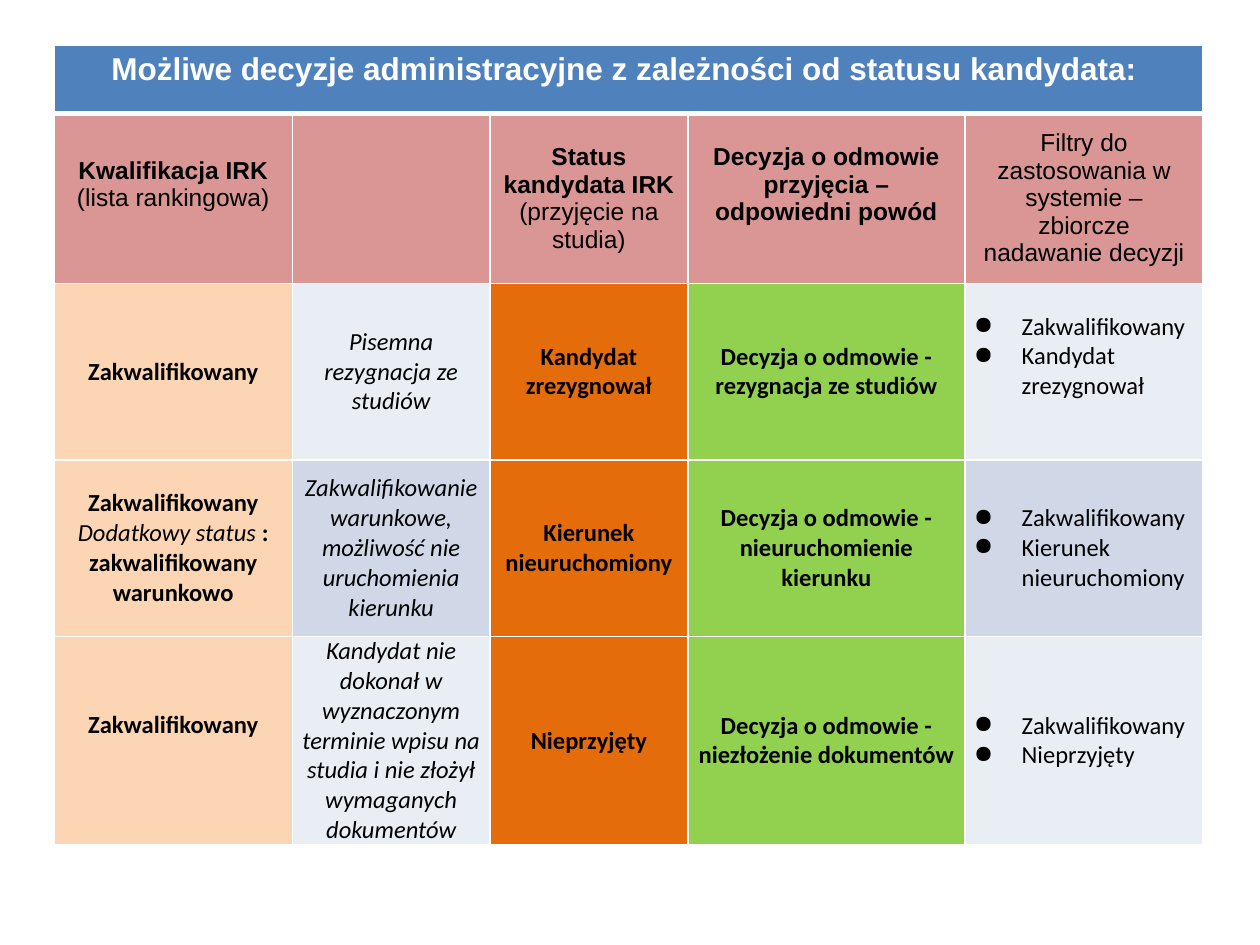
import pptx
import pptx.util
import pptx.dml.color
import pptx.enum.text
import pptx.oxml
import pptx.oxml.ns
from pptx.util import Inches

TITLE = "Możliwe decyzje administracyjne z zależności od statusu kandydata: "
HEADS = [
    [[("Kwalifikacja IRK", "b")], [("(lista rankingowa)", "")]],
    [],
    [[("Status kandydata IRK", "b")], [("(przyjęcie na studia)", "")]],
    [[("Decyzja o odmowie przyjęcia – odpowiedni powód", "b")]],
    [[("Filtry do zastosowania w systemie – zbiorcze nadawanie decyzji", "")]],
]
CASES = [
    {
        "rank": [[("Zakwalifikowany", "b")]],
        "cause": "Pisemna rezygnacja ze studiów",
        "status": "Kandydat zrezygnował",
        "reason": "rezygnacja ze studiów",
    },
    {
        "rank": [
            [("Zakwalifikowany", "b")],
            [("Dodatkowy status", "i"), (" : zakwalifikowany warunkowo", "b")],
        ],
        "cause": "Zakwalifikowanie warunkowe, możliwość nie uruchomienia kierunku",
        "status": "Kierunek nieuruchomiony",
        "reason": "nieuruchomienie kierunku",
    },
    {
        "rank": [[("Zakwalifikowany", "b")]],
        "cause": "Kandydat nie dokonał w wyznaczonym terminie wpisu na studia "
                 "i nie złożył wymaganych dokumentów",
        "status": "Nieprzyjęty",
        "reason": "niezłożenie dokumentów",
    },
]
COLS = [1.89, 1.57, 1.57, 2.2, 1.89]
ROWS = [0.54, 1.35, 1.4, 1.4, 1.4]
LIFT = {(1, 0): 0.27, (1, 3): 0.27, (2, 4): 0.24, (4, 0): 0.24}
THEME = {
    "title": "4F81BD", "head": "D99694", "rank": "FCD5B5",
    "status": "E46C0A", "choice": "92D050", "bands": ["E9EDF4", "D0D8E8"],
    "white": "FFFFFF", "ink": "000000",
    "big": 18, "small": 14, "sans": "Arial", "body": "Calibri",
}


def color(code):
    """Turn a hex code into a colour."""
    return pptx.dml.color.RGBColor.from_string(code)


def edge(cell, widths):
    """Draw white borders, widths in points for left, right, top, bottom."""
    props = cell._tc.get_or_add_tcPr()
    for side, width in zip("LRTB", widths):
        props.append(pptx.oxml.parse_xml(
            f'<a:ln{side} {pptx.oxml.ns.nsdecls("a")} w="{pptx.util.Pt(width)}">'
            f'<a:solidFill><a:srgbClr val="{THEME["white"]}"/></a:solidFill>'
            f'</a:ln{side}>'))


def bullet(par):
    """Give a paragraph a hanging round bullet."""
    props = par._p.get_or_add_pPr()
    props.set("marL", str(Inches(0.38)))
    props.set("indent", str(-Inches(0.38)))
    props.append(pptx.oxml.parse_xml(
        f'<a:buChar {pptx.oxml.ns.nsdecls("a")} char="●"/>'))


def style(font, mark):
    """Set bold and italic from a mark."""
    font.bold, font.italic = mark == "b", mark == "i"


def write(cell, pars, face, size, ink, dots=False):
    """Fill a cell with paragraphs of marked runs."""
    for n, runs in enumerate(pars):
        par = cell.text_frame.paragraphs[0] if n == 0 else cell.text_frame.add_paragraph()
        if dots:
            bullet(par)
        else:
            par.alignment = pptx.enum.text.PP_ALIGN.CENTER
        par.font.name, par.font.size = face, pptx.util.Pt(size)
        par.font.color.rgb = color(ink)
        if len(runs) == 1:
            style(par.font, runs[0][1])
        for text, mark in runs:
            run = par.add_run()
            run.text = text
            if len(runs) > 1:
                style(run.font, mark)


def paint(cell, code):
    """Fill a cell with one colour."""
    cell.fill.solid()
    cell.fill.fore_color.rgb = color(code)


def main():
    """Build the slide with the table of decisions."""
    deck = pptx.Presentation()
    deck.slide_width, deck.slide_height = Inches(10), Inches(7.5)
    slide = deck.slides.add_slide(deck.slide_layouts[6])
    table = slide.shapes.add_table(
        len(ROWS), len(COLS), Inches(0.43), Inches(0.36),
        Inches(sum(COLS)), Inches(sum(ROWS))).table
    table.first_row = table.horz_banding = False
    for col, width in zip(table.columns, COLS):
        col.width = Inches(width)
    for row, height in zip(table.rows, ROWS):
        row.height = Inches(height)

    grid = [[[[(TITLE, "b")]]], HEADS]
    fills = [[THEME["title"]] * len(COLS), [THEME["head"]] * len(COLS)]
    for n, case in enumerate(CASES):
        band = THEME["bands"][n % 2]
        grid.append([
            case["rank"],
            [[(case["cause"], "i")]],
            [[(case["status"], "b")]],
            [[("Decyzja o odmowie - " + case["reason"], "b")]],
            [[("Zakwalifikowany", "")], [(case["status"], "")]],
        ])
        fills.append([THEME["rank"], band, THEME["status"], THEME["choice"], band])

    for r, codes in enumerate(fills):
        for c, code in enumerate(codes):
            cell = table.cell(r, c)
            edge(cell, (1, 1, 3 if r == 1 else 1, 3 if r == 0 else 1))
            paint(cell, code)
            if r > 0:
                cell.vertical_anchor = pptx.enum.text.MSO_ANCHOR.MIDDLE
            if r > 1:
                cell.margin_left = cell.margin_right = Inches(0.07)
                cell.margin_top = cell.margin_bottom = 0
            if (r, c) in LIFT:
                cell.margin_bottom = Inches(LIFT[r, c])
    table.cell(0, 0).merge(table.cell(0, len(COLS) - 1))

    for r, line in enumerate(grid):
        face = THEME["body"] if r > 1 else THEME["sans"]
        size, ink = ((THEME["small"], THEME["ink"]) if r
                     else (THEME["big"], THEME["white"]))
        for c, pars in enumerate(line):
            write(table.cell(r, c), pars, face, size, ink, r > 1 and c == 4)
    deck.save("out.pptx")


if __name__ == "__main__":
    main()
